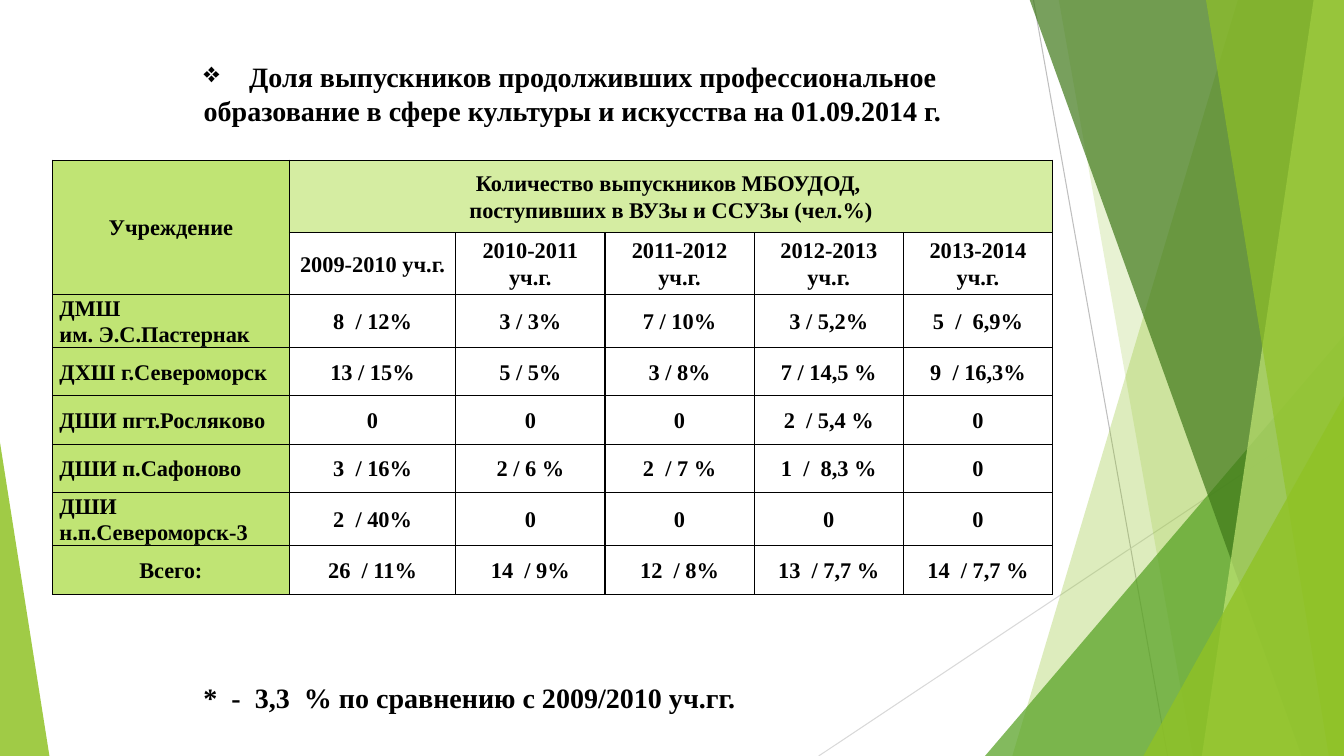
from pptx import Presentation
from pptx.dml.color import RGBColor
from pptx.enum.shapes import MSO_CONNECTOR, MSO_SHAPE
from pptx.enum.text import MSO_ANCHOR as Anchor, PP_ALIGN as Align
from pptx.oxml.ns import qn
from pptx.util import Inches, Pt
from lxml.etree import SubElement

BLACK = RGBColor(0x00, 0x00, 0x00)
GREEN = RGBColor(0x90, 0xC2, 0x26)
MID_GREEN = RGBColor(0x54, 0xA0, 0x21)
DARK_GREEN = RGBColor(0x3F, 0x78, 0x19)
LIGHT_GREEN = RGBColor(0xC0, 0xE4, 0x74)
PALE_GREEN = RGBColor(0xD5, 0xED, 0xA2)
GREY = RGBColor(0xBF, 0xBF, 0xBF)
LIGHT_GREY = RGBColor(0xD9, 0xD9, 0xD9)

WIDTH, HEIGHT, PANEL_TOP = 13.33, 7.5, -0.01

COLUMN_WIDTHS = [2.35, 1.65] + [1.48] * 4
ROW_HEIGHTS = [0.72, 0.61] + [0.48] * 6
ROWS = [
    ["Учреждение",
     "Количество выпускников МБОУДОД, \nпоступивших в ВУЗы и ССУЗы (чел.%)", "", "", "", ""],
    [""] + [f"{year}-{year + 1} уч.г." for year in range(2009, 2014)],
    ["ДМШ \nим. Э.С.Пастернак", "8  / 12%", "3 / 3%", "7 / 10%", "3 / 5,2%", "5  /  6,9%"],
    ["ДХШ г.Североморск", "13 / 15%", "5 / 5%", "3 / 8%", "7 / 14,5 %", "9  / 16,3%"],
    ["ДШИ пгт.Росляково", "0", "0", "0", "2  / 5,4 %", "0"],
    ["ДШИ п.Сафоново", "3  / 16%", "2 / 6 %", "2  / 7 %", "1  /  8,3 %", "0"],
    ["ДШИ н.п.Североморск-3", "2  / 40%", "0", "0", "0", "0"],
    ["Всего:", "26  / 11%", "14  / 9%", "12  / 8%", "13  / 7,7 %", "14  / 7,7 %"],
]


class SlideBuilder:
    font = "Times New Roman"
    text_size = Pt(20)
    cell_size = Pt(16)

    def __init__(self, slide):
        self.slide = slide
        self.shapes = slide.shapes

    def line(self, start, end, color):
        points = [Inches(value) for value in (*start, *end)]
        connector = self.shapes.add_connector(MSO_CONNECTOR.STRAIGHT, *points)
        connector.line.color.rgb = color
        connector.line.width = Pt(0.75)
        SubElement(connector.element.spPr, qn("a:effectLst"))

    def paint(self, shape, color, opacity):
        shape.shadow.inherit = False
        shape.fill.solid()
        shape.fill.fore_color.rgb = color
        shape.line.fill.background()
        color_element = shape.element.spPr.find(".//" + qn("a:srgbClr"))
        SubElement(color_element, qn("a:alpha"), val=str(opacity * 1000))

    def panel(self, top_x, bottom_x, color, opacity):
        """Draw a slanted panel that reaches the right edge of the slide."""
        corners = [(top_x, PANEL_TOP), (WIDTH, PANEL_TOP), (WIDTH, HEIGHT), (bottom_x, HEIGHT)]
        points = [(Inches(x), Inches(y)) for x, y in corners]
        builder = self.shapes.build_freeform(*points[0])
        builder.add_line_segments(points[1:], close=True)
        self.paint(builder.convert_to_shape(), color, opacity)

    def triangle(self, left, top, width, apex, color, opacity):
        """Draw a triangle that stands on the bottom edge of the slide."""
        shape = self.shapes.add_shape(MSO_SHAPE.ISOSCELES_TRIANGLE, Inches(left), Inches(top),
                                      Inches(width), Inches(HEIGHT - top))
        shape.adjustments[0] = apex
        self.paint(shape, color, opacity)

    def run(self, paragraph, text, size):
        run = paragraph.add_run()
        run.text = text
        run.font.name = self.font
        run.font.size = size
        run.font.bold = True
        run.font.color.rgb = BLACK

    def title(self, text, left, top, width, height):
        shape = self.shapes.title
        shape.left, shape.top = Inches(left), Inches(top)
        shape.width, shape.height = Inches(width), Inches(height)
        frame = shape.text_frame
        frame.word_wrap = True
        frame.vertical_anchor = Anchor.TOP
        paragraph = frame.paragraphs[0]
        paragraph.alignment = Align.LEFT
        self.run(paragraph, "\t" + text, self.text_size)
        properties = paragraph._p.get_or_add_pPr()
        properties.set("marL", "0")
        properties.set("indent", "0")
        SubElement(properties, qn("a:buChar"), char="❖")
        tabs = SubElement(properties, qn("a:tabLst"))
        SubElement(tabs, qn("a:tab"), pos=str(Inches(0.45)), algn="l")

    def text(self, text, left, top, width, height):
        box = self.shapes.add_textbox(Inches(left), Inches(top), Inches(width), Inches(height))
        box.text_frame.word_wrap = True
        self.run(box.text_frame.paragraphs[0], text, self.text_size)

    def cell(self, cell, text, alignment, fill):
        cell.vertical_anchor = Anchor.MIDDLE
        cell.margin_left = cell.margin_right = Inches(0.07)
        cell.margin_top = cell.margin_bottom = 0
        if fill is None:
            cell.fill.background()
        else:
            cell.fill.solid()
            cell.fill.fore_color.rgb = fill
        frame = cell.text_frame
        for index, line in enumerate(text.split("\n")):
            paragraph = frame.add_paragraph() if index else frame.paragraphs[0]
            paragraph.alignment = alignment
            paragraph.line_spacing = 1.07
            if line:
                self.run(paragraph, line, self.cell_size)
        self.borders(cell)

    def borders(self, cell):
        properties = cell._tc.get_or_add_tcPr()
        for position, side in enumerate(("lnL", "lnR", "lnT", "lnB")):
            border = SubElement(properties, qn("a:" + side), w=str(Pt(1)))
            solid = SubElement(border, qn("a:solidFill"))
            SubElement(solid, qn("a:srgbClr"), val=str(BLACK))
            properties.insert(position, border)

    def table(self, rows, left, top):
        frame = self.shapes.add_table(len(rows), len(COLUMN_WIDTHS), Inches(left), Inches(top),
                                      Inches(sum(COLUMN_WIDTHS)), Inches(sum(ROW_HEIGHTS)))
        table = frame.table
        for column, width in zip(table.columns, COLUMN_WIDTHS):
            column.width = Inches(width)
        for row, height in zip(table.rows, ROW_HEIGHTS):
            row.height = Inches(height)
        last_row = len(rows) - 1
        for row_index, row in enumerate(rows):
            for column_index, text in enumerate(row):
                is_name = column_index == 0 and 2 <= row_index < last_row
                fill = PALE_GREEN if row_index == 0 else None
                if column_index == 0:
                    fill = LIGHT_GREEN
                self.cell(table.cell(row_index, column_index), text,
                          Align.JUSTIFY if is_name else Align.CENTER, fill)
        table.cell(0, 0).merge(table.cell(1, 0))
        table.cell(0, 1).merge(table.cell(0, len(COLUMN_WIDTHS) - 1))


def main():
    presentation = Presentation()
    presentation.slide_width = Inches(WIDTH)
    presentation.slide_height = Inches(HEIGHT)
    builder = SlideBuilder(presentation.slides.add_slide(presentation.slide_layouts[5]))

    builder.line((10.25, 0), (11.58, HEIGHT), GREY)
    builder.line((WIDTH, 4.03), (8.12, HEIGHT), LIGHT_GREY)
    builder.panel(12.28, 10.04, GREEN, 30)
    builder.panel(10.5, 11.83, GREEN, 20)
    builder.triangle(9.77, 3.33, 3.56, 1, MID_GREEN, 72)
    builder.panel(10.21, 12.91, DARK_GREEN, 70)
    builder.panel(13.03, 11.92, LIGHT_GREEN, 70)
    builder.panel(11.96, 13.18, GREEN, 65)
    builder.triangle(11.34, 3.93, 1.99, 1, GREEN, 80)
    builder.triangle(0, 4.39, 0.49, 0, GREEN, 85)

    builder.table(ROWS, 0.52, 1.59)
    builder.title("Доля выпускников продолживших профессиональное образование "
                  "в сфере культуры и искусства на 01.09.2014 г.", 1.92, 0.54, 7.58, 0.77)
    builder.text("*  -  3,3  % по сравнению с 2009/2010 уч.гг.", 1.92, 6.7, 6.17, 0.44)
    presentation.save("out.pptx")


if __name__ == "__main__":
    main()
